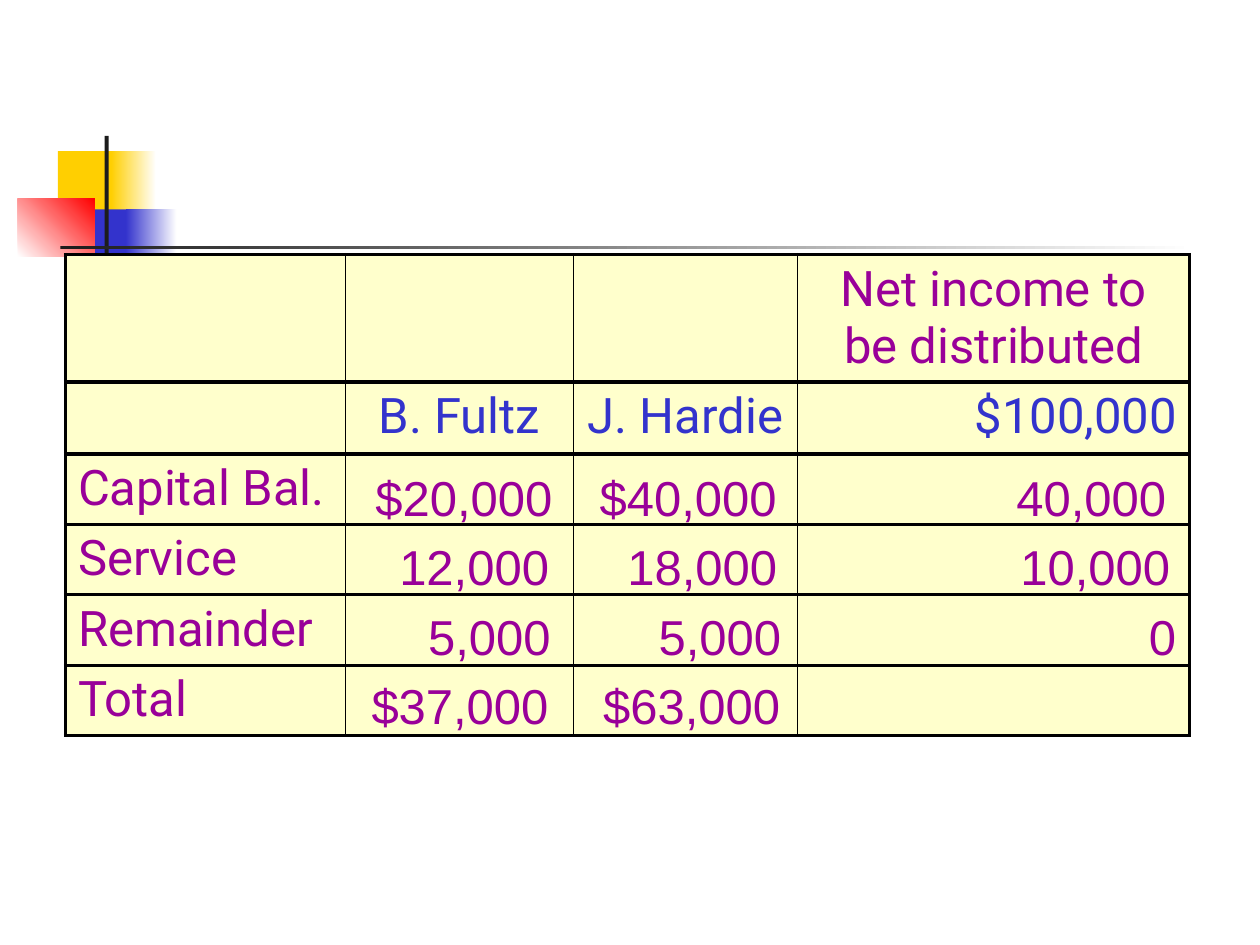
import pptx
import pptx.util
import pptx.dml.color
import pptx.enum.shapes
import pptx.enum.text
from lxml import etree

Cm, Pt = pptx.util.Cm, pptx.util.Pt
RGBColor = pptx.dml.color.RGBColor
PP_ALIGN = pptx.enum.text.PP_ALIGN

WHITE = RGBColor(0xFF, 0xFF, 0xFF)
BLACK = RGBColor(0x00, 0x00, 0x00)
CHARCOAL = RGBColor(0x1C, 0x1C, 0x1C)
GOLD = RGBColor(0xFF, 0xCF, 0x01)
BLUE = RGBColor(0x33, 0x33, 0xCC)
RED = RGBColor(0xFF, 0x00, 0x00)
CREAM = RGBColor(0xFF, 0xFF, 0xCC)
PURPLE = RGBColor(0x99, 0x00, 0x99)

DECORATION = [
    ((1.17, 3.05, 1.22, 1.32), [GOLD], 0),
    ((2.24, 3.05, 0.91, 1.32), [GOLD, WHITE], 0),
    ((1.5, 4.22, 1.17, 1.32), [BLUE], 0),
    ((2.54, 4.22, 1.02, 1.32), [BLUE, WHITE], 0),
    ((0.36, 4.01, 1.55, 1.17), [WHITE, RED], 45),
    ((2.11, 2.74, 0.08, 2.92), [CHARCOAL], 0),
    ((1.22, 4.95, 22.86, 0.08), [CHARCOAL, WHITE], 0),
]

TABLE_LEFT, TABLE_TOP = 1.32, 5.13
COLUMNS = [5.64, 4.6, 4.52, 7.9]
ROWS = [2.57, 1.45] + [1.42] * 4
LABELS = [
    ["", "", "", "Net income to be distributed"],
    ["", "B. Fultz", "J. Hardie", "$100,000"],
    ["Capital Bal.", "", "", ""],
    ["Service", "", "", ""],
    ["Remainder", "", "", ""],
    ["Total", "", "", ""],
]
THICK, THIN = 2.25, 1

AMOUNTS = [
    [("$20,000", 7.32), ("$40,000", 11.84), ("40,000", 20.24)],
    [("12,000", 7.8), ("18,000", 12.4), ("10,000", 20.32)],
    [("5,000", 8.38), ("5,000", 13.03), ("0", 22.91)],
    [("$37,000", 7.24), ("$63,000", 11.91)],
]
AMOUNT_TOP, AMOUNT_STEP, AMOUNT_HEIGHT = 9.3, 1.4, 1.42
DIGIT_WIDTH, COMMA_WIDTH, INSETS = 0.55, 0.27, 0.51


def write(tf, text, font, color, align=PP_ALIGN.LEFT):
    p = tf.paragraphs[0]
    p.alignment = align
    r = p.add_run()
    r.text = text
    for name, value in {"name": font, "size": Pt(28), "bold": False}.items():
        setattr(r.font, name, value)
    r.font.color.rgb = color


def add_decoration(s, box, colors, angle):
    sp = s.shapes.add_shape(pptx.enum.shapes.MSO_SHAPE.RECTANGLE, *map(Cm, box))
    sp.shadow.inherit = False
    sp.line.fill.background()
    if len(colors) == 1:
        sp.fill.solid()
        sp.fill.fore_color.rgb = colors[0]
        return
    sp.fill.gradient()
    sp.fill.gradient_angle = angle
    for stop, color in zip(sp.fill.gradient_stops, colors):
        stop.color.rgb = color


def add_border(cell, side, width):
    ns = "http://schemas.openxmlformats.org/drawingml/2006/main"
    tc_pr = cell._tc.get_or_add_tcPr()
    ln = etree.SubElement(tc_pr, f"{{{ns}}}ln{side}", w=str(Pt(width)))
    fill = etree.SubElement(ln, f"{{{ns}}}solidFill")
    etree.SubElement(fill, f"{{{ns}}}srgbClr", val=str(BLACK))


def add_income_table(s):
    size = (Cm(sum(COLUMNS)), Cm(sum(ROWS)))
    table = s.shapes.add_table(len(ROWS), len(COLUMNS), Cm(TABLE_LEFT), Cm(TABLE_TOP), *size).table
    for name in ("first_row", "horz_banding"):
        setattr(table, name, False)
    for column, width in zip(table.columns, COLUMNS):
        column.width = Cm(width)
    last = len(COLUMNS) - 1
    for i, labels in enumerate(LABELS):
        table.rows[i].height = Cm(ROWS[i])
        for j, text in enumerate(labels):
            cell = table.cell(i, j)
            borders = {"L": THIN if j else THICK, "R": THIN if j < last else THICK,
                       "T": THICK, "B": THICK}
            for side, width in borders.items():
                add_border(cell, side, width)
            cell.fill.solid()
            cell.fill.fore_color.rgb = CREAM
            if text:
                align = PP_ALIGN.CENTER if j else PP_ALIGN.LEFT
                if text.startswith("$"):
                    align = PP_ALIGN.RIGHT
                write(cell.text_frame, text, "Roboto", BLUE if i == 1 else PURPLE, align)


def add_amount(s, text, left, top):
    commas = text.count(",")
    width = (len(text) - commas) * DIGIT_WIDTH + commas * COMMA_WIDTH + INSETS
    tf = s.shapes.add_textbox(Cm(left), Cm(top), Cm(width), Cm(AMOUNT_HEIGHT)).text_frame
    tf.word_wrap = False
    tf.auto_size = pptx.enum.text.MSO_AUTO_SIZE.SHAPE_TO_FIT_TEXT
    write(tf, text, "Arial", PURPLE)


def main():
    prs = pptx.Presentation()
    prs.slide_width, prs.slide_height = Cm(25.4), Cm(19.05)
    s = prs.slides.add_slide(prs.slide_layouts[6])
    for box, colors, angle in DECORATION:
        add_decoration(s, box, colors, angle)
    add_income_table(s)
    for i, amounts in enumerate(AMOUNTS):
        for text, left in amounts:
            add_amount(s, text, left, AMOUNT_TOP + i * AMOUNT_STEP)
    prs.save("out.pptx")


if __name__ == "__main__":
    main()
